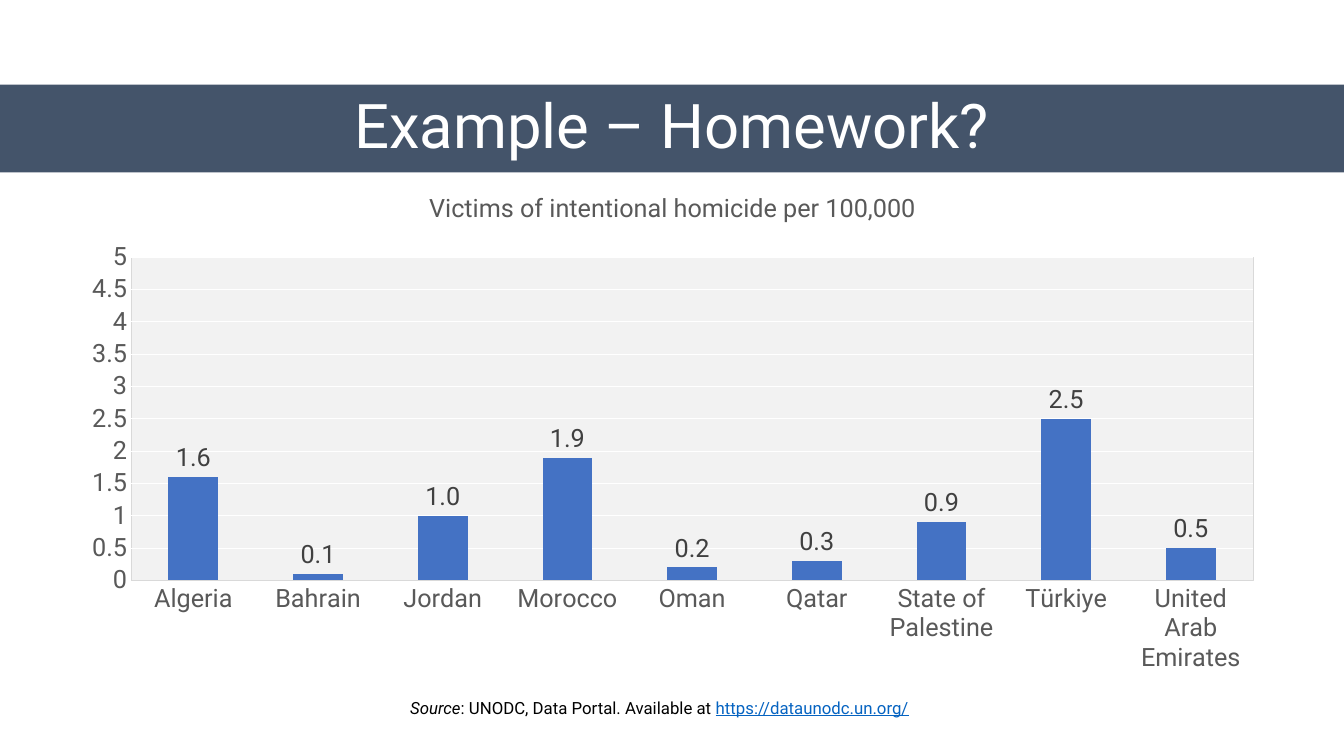
from lxml import etree
from pptx import Presentation
from pptx import util as u
from pptx.chart.data import CategoryChartData
from pptx.dml.color import RGBColor
from pptx.enum import chart as ch, text
from pptx.oxml import parse_xml
from pptx.oxml.ns import nsdecls, qn

COLORS = {
    "band": "44546A", "white": "FFFFFF", "black": "000000", "link": "0563C1",
    "bar": "4472C4", "plot": "F2F2F2", "line": "D9D9D9", "axis": "595959",
    "label": "404040",
}
HOMICIDE_RATES = {
    "Algeria": 1.6, "Bahrain": 0.1, "Jordan": 1.0, "Morocco": 1.9, "Oman": 0.2,
    "Qatar": 0.3, "State of Palestine": 0.9, "Türkiye": 2.5,
    "United Arab Emirates": 0.5,
}


def rgb(name):
    return RGBColor.from_string(COLORS[name])


def format_font(font, size, color, italic=False, underline=False):
    font.name, font.size = "Roboto", u.Pt(size)
    font.bold, font.italic, font.underline = False, italic, underline
    font.color.rgb = rgb(color)


def add_run(p, words, **fmt):
    r = p.add_run()
    r.text = words
    format_font(r.font, **fmt)


def format_plot_area(chart, **layout):
    """Fill and outline the plot area; layout gives x, y, w, h as chart fractions."""
    area = chart._chartSpace.chart.plotArea
    for old in area.findall(qn("c:layout")):
        area.remove(old)
    sizes = "".join(f'<c:{k} val="{v:.4f}"/>' for k, v in layout.items())
    area.insert(0, parse_xml(
        f'<c:layout {nsdecls("c")}><c:manualLayout><c:layoutTarget val="inner"/>'
        f'<c:xMode val="edge"/><c:yMode val="edge"/>{sizes}'
        '</c:manualLayout></c:layout>'))
    sp_pr = etree.SubElement(area, qn("c:spPr"))
    fill = etree.SubElement(sp_pr, qn("a:solidFill"))
    etree.SubElement(fill, qn("a:srgbClr"), val=COLORS["plot"])
    ln = etree.SubElement(sp_pr, qn("a:ln"), w=str(u.Pt(0.75)))
    fill = etree.SubElement(ln, qn("a:solidFill"))
    etree.SubElement(fill, qn("a:srgbClr"), val=COLORS["line"])


class Deck:
    def __init__(self, width, height):
        self.prs = Presentation()
        self.prs.slide_width, self.prs.slide_height = u.Inches(width), u.Inches(height)
        self.s = self.prs.slides.add_slide(self.prs.slide_layouts[5])

    def title_band(self, words, x, y, w, h):
        sp = self.s.shapes.title
        sp.left, sp.top, sp.width, sp.height = map(u.Inches, (x, y, w, h))
        sp.fill.solid()
        sp.fill.fore_color.rgb = rgb("band")
        tf = sp.text_frame
        tf.auto_size = text.MSO_AUTO_SIZE.NONE
        tf.vertical_anchor = text.MSO_ANCHOR.MIDDLE
        p = tf.paragraphs[0]
        p.alignment, p.line_spacing = text.PP_ALIGN.CENTER, 0.9
        add_run(p, words, size=44, color="white")

    def text_line(self, runs, x, y, w, h):
        tf = self.s.shapes.add_textbox(*map(u.Inches, (x, y, w, h))).text_frame
        tf.word_wrap = True
        for words, fmt in runs:
            add_run(tf.paragraphs[0], words, **fmt)

    def column_chart(self, title, values, x, y, w, h, plot):
        """Add a column chart; plot is the left, top, width, height of its plot area."""
        data = CategoryChartData()
        data.categories = list(values)
        data.add_series("Series 1", list(values.values()))
        chart = self.s.shapes.add_chart(
            ch.XL_CHART_TYPE.COLUMN_CLUSTERED, *map(u.Inches, (x, y, w, h)), data).chart
        format_font(chart.font, 18, "black")
        chart.has_legend = False
        add_run(chart.chart_title.text_frame.paragraphs[0], title, size=18, color="axis")
        chart.chart_title.include_in_layout = False

        for axis in (chart.category_axis, chart.value_axis):
            axis.major_tick_mark = axis.minor_tick_mark = ch.XL_TICK_MARK.NONE
            format_font(axis.tick_labels.font, 18, "axis")
        line = chart.category_axis.format.line
        line.color.rgb, line.width = rgb("line"), u.Pt(0.75)
        va = chart.value_axis
        va.minimum_scale, va.maximum_scale, va.major_unit = 0, 5, 0.5
        va.format.line.fill.background()
        grid = va.major_gridlines.format.line
        grid.color.rgb, grid.width = rgb("white"), u.Pt(0.75)

        bars = chart.plots[0]
        bars.gap_width, bars.vary_by_categories = 150, False
        fill = bars.series[0].format.fill
        fill.solid()
        fill.fore_color.rgb = rgb("bar")
        bars.has_data_labels = True
        labels = bars.data_labels
        labels.show_value = True
        labels.number_format, labels.number_format_is_linked = "#,##0.0", False
        labels.position = ch.XL_LABEL_POSITION.OUTSIDE_END
        format_font(labels.font, 18, "label")
        px, py, pw, ph = plot
        format_plot_area(chart, x=(px - x) / w, y=(py - y) / h, w=pw / w, h=ph / h)


def main():
    deck = Deck(13.33, 7.5)
    deck.column_chart("Victims of intentional homicide per 100,000", HOMICIDE_RATES,
                      0.67, 1.7, 12, 5.07, plot=(1.3, 2.55, 11.13, 3.21))
    deck.title_band("Example – Homework?", 0, 0.84, 13.33, 0.87)
    plain = {"size": 12, "color": "black"}
    deck.text_line([
        ("Source", {**plain, "italic": True}),
        (": UNODC, Data Portal. Available at ", plain),
        ("https://dataunodc.un.org/", {"size": 12, "color": "link", "underline": True}),
    ], 3.97, 6.87, 5.39, 0.3)
    deck.prs.save("out.pptx")


if __name__ == "__main__":
    main()
